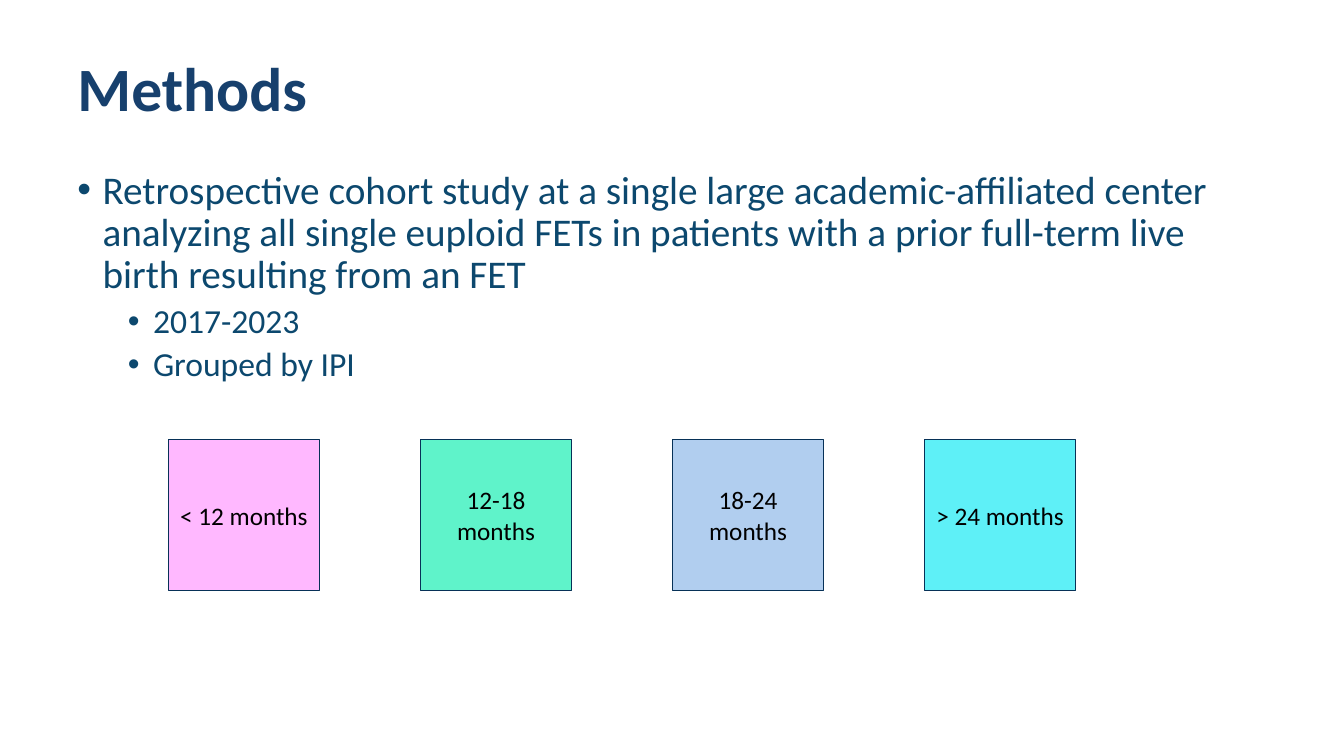
"""Build the Methods slide with its four interval groups."""
from lxml import etree
from pptx import Presentation
from pptx.dml.color import RGBColor
from pptx.enum import shapes, text
from pptx.oxml.ns import qn
from pptx.util import Inches, Pt


def rgb(value):
    return RGBColor.from_string(value)


def write(p, content, color, **font):
    r = p.add_run()
    r.text = content
    r.font.color.rgb = rgb(color)
    for name, value in {"name": "Calibri", **font}.items():
        setattr(r.font, name, value)


prs = Presentation()
prs.slide_width, prs.slide_height = Inches(13.33), Inches(7.5)
s = prs.slides.add_slide(prs.slide_layouts[6])

tf = s.shapes.add_textbox(Inches(0.67), Inches(1.64), Inches(12), Inches(4.52)).text_frame
tf.word_wrap = True
bullets = [
    ("Retrospective cohort study at a single large academic-affiliated center analyzing "
     "all single euploid FETs in patients with a prior full-term live birth resulting "
     "from an FET", 0, 28, 0),
    ("2017-2023", 1, 24, 5),
    ("Grouped by IPI", 1, 24, 5),
]
for i, (content, level, size, before) in enumerate(bullets):
    p = tf.add_paragraph() if i else tf.paragraphs[0]
    p.level, p.line_spacing, p.space_before = level, 0.9, Pt(before)
    pPr = p._p.get_or_add_pPr()
    pPr.set("marL", str(Inches(0.25 + 0.5 * level)))
    pPr.set("indent", str(Inches(-0.25)))
    etree.SubElement(pPr, qn("a:buFont")).set("typeface", "Arial")
    etree.SubElement(pPr, qn("a:buChar")).set("char", "•")
    write(p, content, "0C486E", size=Pt(size))

tf = s.shapes.add_textbox(Inches(0.67), Inches(0.31), Inches(12), Inches(1.2)).text_frame
tf.word_wrap = True
tf.vertical_anchor = text.MSO_ANCHOR.MIDDLE
p = tf.paragraphs[0]
p.line_spacing = 0.9
write(p, "Methods", "17406D", size=Pt(44), bold=True)

groups = [
    ("< 12 months", "FFB8FF"),
    ("12-18 months", "5FF3CA"),
    ("18-24 months", "B1CEEF"),
    ("> 24 months", "5EF0F7"),
]
for i, (label, fill) in enumerate(groups):
    sp = s.shapes.add_shape(shapes.MSO_SHAPE.RECTANGLE, Inches(1.67 + 2.5 * i),
                            Inches(4.36), Inches(1.5), Inches(1.5))
    sp.shadow.inherit = False
    sp.fill.solid()
    sp.fill.fore_color.rgb = rgb(fill)
    sp.line.color.rgb = rgb("073157")
    sp.line.width = Pt(1)
    tf = sp.text_frame
    tf.word_wrap = True
    tf.vertical_anchor = text.MSO_ANCHOR.MIDDLE
    p = tf.paragraphs[0]
    p.alignment = text.PP_ALIGN.CENTER
    write(p, label, "000000", size=Pt(18))

prs.save("out.pptx")
